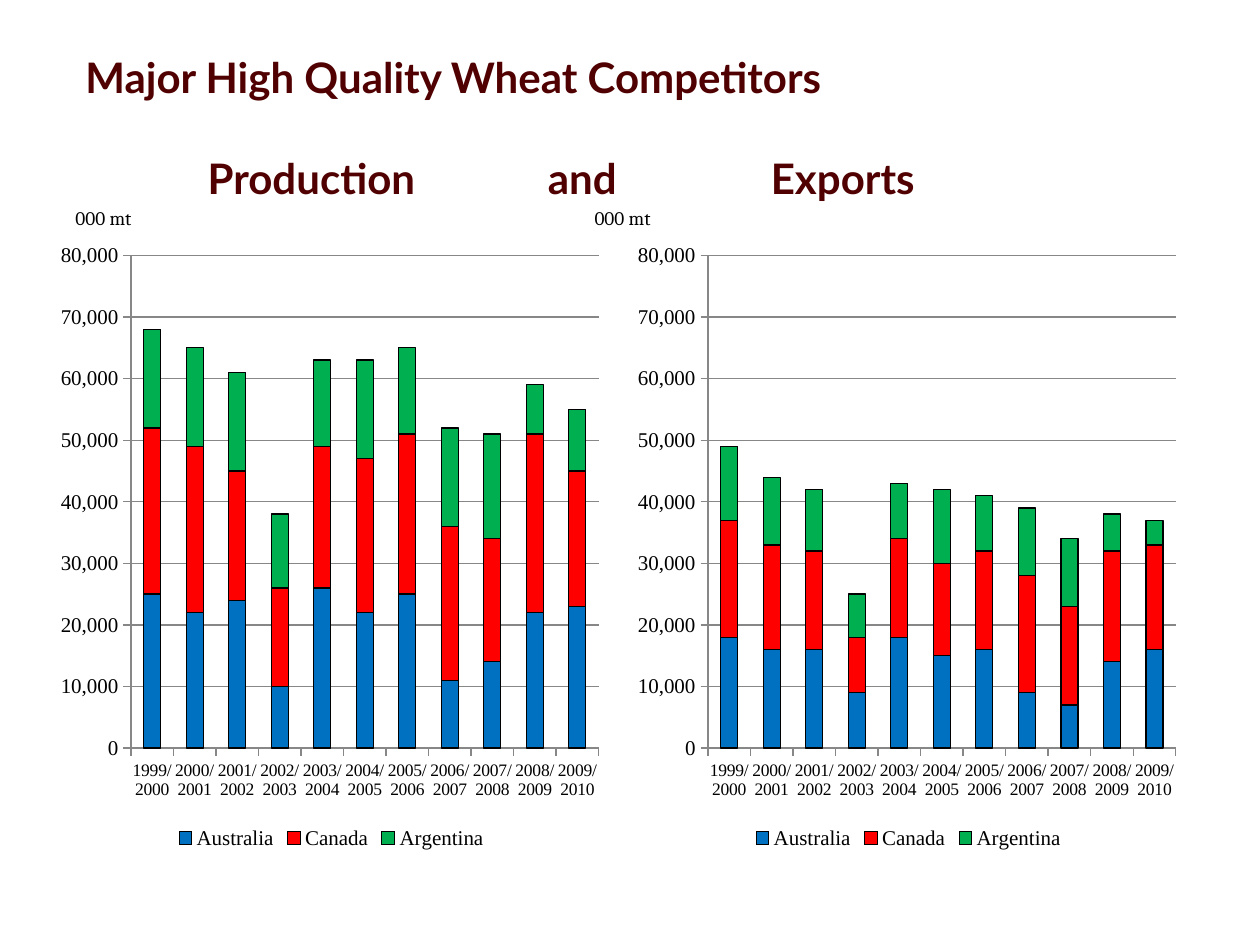
from dataclasses import dataclass

from lxml.etree import SubElement
from pptx import Presentation
from pptx.chart.data import CategoryChartData
from pptx.dml.color import RGBColor
from pptx.enum.chart import XL_CHART_TYPE, XL_LEGEND_POSITION, XL_TICK_MARK
from pptx.enum.text import MSO_ANCHOR
from pptx.oxml import parse_xml
from pptx.oxml.ns import nsdecls, qn
from pptx.util import Inches, Pt

YEARS = [f"{year}/{year + 1}" for year in range(1999, 2010)]
COLORS = {"Australia": "0070C0", "Canada": "FF0000", "Argentina": "00B050"}
PLOT_AREA = {"x": 0.14, "y": 0.04, "w": 0.84, "h": 0.79}


@dataclass
class WheatChart:
    left: float
    thousands: dict[str, list[int]]


@dataclass
class TextBox:
    left: float
    top: float
    width: float
    height: float
    font: str
    size: float
    color: str
    bold: bool = False


PRODUCTION = WheatChart(0.42, {
    "Australia": [25, 22, 24, 10, 26, 22, 25, 11, 14, 22, 23],
    "Canada": [27, 27, 21, 16, 23, 25, 26, 25, 20, 29, 22],
    "Argentina": [16, 16, 16, 12, 14, 16, 14, 16, 17, 8, 10],
})
EXPORTS = WheatChart(5, {
    "Australia": [18, 16, 16, 9, 18, 15, 16, 9, 7, 14, 16],
    "Canada": [19, 17, 16, 9, 16, 15, 16, 19, 16, 18, 17],
    "Argentina": [12, 11, 10, 7, 9, 12, 9, 11, 11, 6, 4],
})
TITLE = TextBox(0.58, 0.58, 9, 0.86, "Lato", 24, "500000", True)
UNITS = TextBox(0.5, 1.58, 6.42, 0.29, "Cambria", 11, "000000")


def rgb(color: str) -> RGBColor:
    return RGBColor.from_string(color)


def add_text(s, box: TextBox, lines: list[str], tabs: list[float], gap: float = 0) -> None:
    shape = s.shapes.add_textbox(
        Inches(box.left), Inches(box.top), Inches(box.width), Inches(box.height))
    tf = shape.text_frame
    tf.word_wrap = True
    tf.vertical_anchor = MSO_ANCHOR.MIDDLE
    for i, line in enumerate(lines):
        p = tf.add_paragraph() if i else tf.paragraphs[0]
        p.text = line
        if i:
            p.space_before = Pt(gap)
        if "\t" in line:
            tab_list = SubElement(p._p.get_or_add_pPr(), qn("a:tabLst"))
            for tab in tabs:
                SubElement(tab_list, qn("a:tab"), pos=str(Inches(tab)), algn="l")
        p.font.name = box.font
        p.font.size = Pt(box.size)
        p.font.bold = box.bold
        p.font.color.rgb = rgb(box.color)


def set_plot_area(chart) -> None:
    plot_area = chart._chartSpace.chart.plotArea
    for old in plot_area.findall(qn("c:layout")):
        plot_area.remove(old)
    sizes = "".join(f'<c:{key} val="{value}"/>' for key, value in PLOT_AREA.items())
    plot_area.insert(0, parse_xml(
        f'<c:layout {nsdecls("c")}><c:manualLayout><c:layoutTarget val="inner"/>'
        f'<c:xMode val="edge"/><c:yMode val="edge"/>{sizes}'
        f'</c:manualLayout></c:layout>'))


def add_wheat_chart(s, wheat: WheatChart) -> None:
    data = CategoryChartData(number_format="#,##0")
    data.categories = YEARS
    for country, values in wheat.thousands.items():
        data.add_series(country, [value * 1000 for value in values])
    chart = s.shapes.add_chart(
        XL_CHART_TYPE.COLUMN_STACKED, Inches(wheat.left), Inches(1.83),
        Inches(4.42), Inches(4.95), data).chart
    chart.has_title = False
    chart.font.name = "Times New Roman"
    chart.font.size = Pt(18)
    chart.font.color.rgb = rgb("000000")
    set_plot_area(chart)

    chart.has_legend = True
    chart.legend.position = XL_LEGEND_POSITION.BOTTOM
    chart.legend.include_in_layout = False
    chart.legend.font.size = Pt(12)

    for axis, size in ((chart.category_axis, 10), (chart.value_axis, 12)):
        axis.tick_labels.font.size = Pt(size)
        axis.major_tick_mark = XL_TICK_MARK.OUTSIDE
        axis.format.line.color.rgb = rgb("878787")
    axis = chart.value_axis
    axis.minimum_scale, axis.maximum_scale, axis.major_unit = 0, 80000, 10000
    axis.tick_labels.number_format = "#,##0"
    axis.tick_labels.number_format_is_linked = False
    axis.has_major_gridlines = True
    axis.major_gridlines.format.line.color.rgb = rgb("878787")

    plot = chart.plots[0]
    plot.gap_width, plot.overlap = 150, 100
    plot.vary_by_categories = False
    for series in plot.series:
        series.format.fill.solid()
        series.format.fill.fore_color.rgb = rgb(COLORS[series.name])
        series.format.line.color.rgb = rgb("000000")
        series.format.line.width = Pt(0.75)


def main() -> None:
    prs = Presentation()
    prs.slide_width, prs.slide_height = Inches(10), Inches(7.5)
    s = prs.slides.add_slide(prs.slide_layouts[6])
    add_text(s, TITLE, ["Major High Quality Wheat Competitors",
                        "\tProduction\tand\tExports"], [0.97, 3.67, 5.44], 28.8)
    for wheat in (EXPORTS, PRODUCTION):
        add_wheat_chart(s, wheat)
    add_text(s, UNITS, ["000 mt\t000 mt"], [4.12])
    prs.save("out.pptx")


if __name__ == "__main__":
    main()
